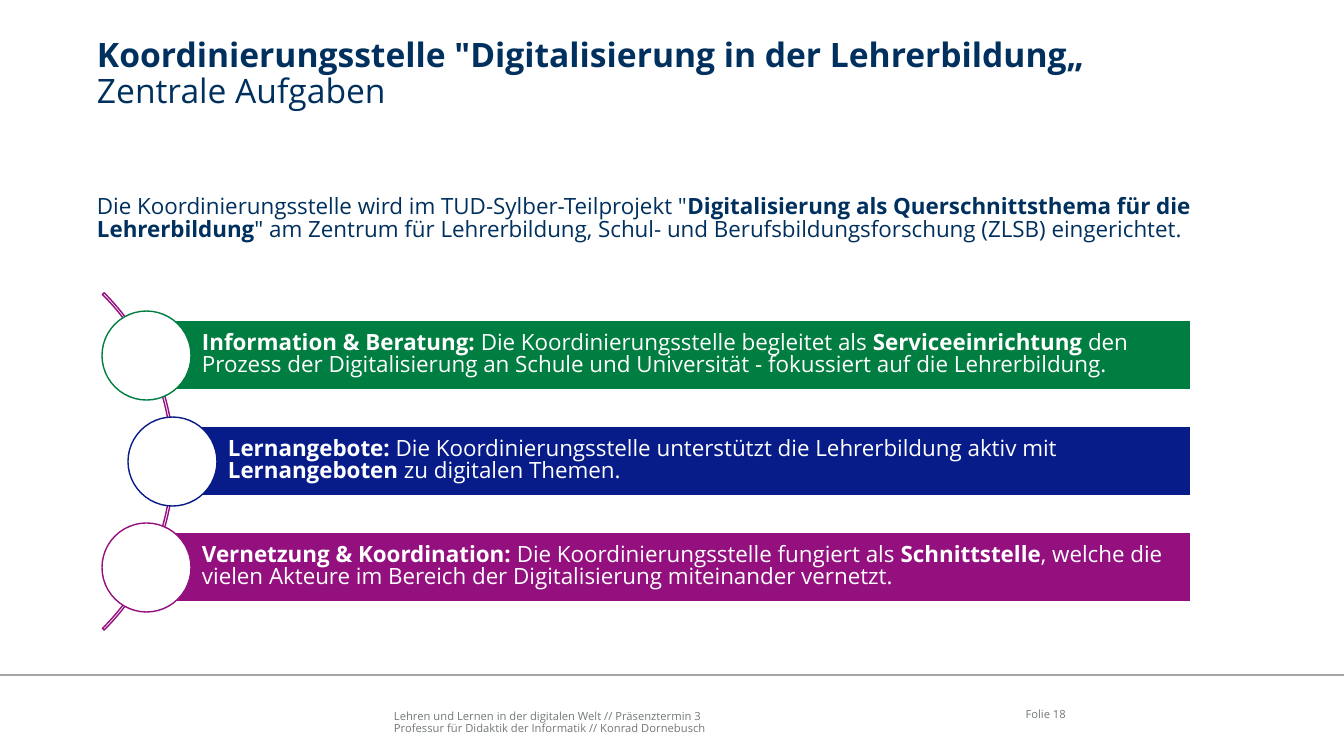
from dataclasses import dataclass

from lxml import etree
from pptx import Presentation
from pptx.dml.color import RGBColor
from pptx.enum import shapes, text
from pptx.oxml import ns
from pptx.util import Pt

EMU_PER_PX = 914400 / 100.8


@dataclass(frozen=True)
class Theme:
    font: str = "Open Sans"
    navy: str = "00305E"
    grey: str = "727879"
    rule: str = "A6A6A6"
    white: str = "FFFFFF"
    green: str = "007D40"
    blue: str = "071C89"
    purple: str = "93107E"
    title_size: int = 24
    body_size: int = 16
    footer_size: int = 8


THEME = Theme()

BAR_RIGHT, BAR_TOP, BAR_HEIGHT, BAR_PITCH = 1191, 320, 70, 106
CIRCLE_SIZE = 89

TASKS = [
    (146, THEME.green, [
        ("Information & Beratung: ", True),
        ("Die Koordinierungsstelle begleitet als ", False),
        ("Serviceeinrichtung", True),
        (" den Prozess der Digitalisierung an Schule und Universität"
         " - fokussiert auf die Lehrerbildung.", False)]),
    (172, THEME.blue, [
        ("Lernangebote: ", True),
        ("Die Koordinierungsstelle unterstützt die Lehrerbildung aktiv mit ", False),
        ("Lernangeboten", True),
        (" zu digitalen Themen.", False)]),
    (146, THEME.purple, [
        ("Vernetzung & Koordination: ", True),
        ("Die Koordinierungsstelle fungiert als ", False),
        ("Schnittstelle", True),
        (", welche die vielen Akteure im Bereich der Digitalisierung"
         " miteinander vernetzt.", False)]),
]


def px(*lengths):
    return [round(length * EMU_PER_PX) for length in lengths]


def rgb(color):
    return RGBColor.from_string(color)


def fill_frame(frame, paragraphs, size, color, spacing, insets=(0, 0, 0, 0)):
    """Write paragraphs, each a list of (words, bold) runs."""
    frame.word_wrap = True
    (frame.margin_left, frame.margin_top,
     frame.margin_right, frame.margin_bottom) = px(*insets)
    for index, runs in enumerate(paragraphs):
        paragraph = frame.add_paragraph() if index else frame.paragraphs[0]
        paragraph.alignment = text.PP_ALIGN.LEFT
        paragraph.line_spacing = spacing
        for words, bold in runs:
            run = paragraph.add_run()
            run.text = words
            run.font.name = THEME.font
            run.font.size = Pt(size)
            run.font.bold = bold
            run.font.color.rgb = rgb(color)


def add_text(slide, box, paragraphs, size, color, spacing):
    frame = slide.shapes.add_textbox(*px(*box)).text_frame
    fill_frame(frame, paragraphs, size, color, spacing)
    return frame


def add_outlined_shape(slide, kind, box, line, fill=None):
    shape = slide.shapes.add_shape(kind, *px(*box))
    shape.shadow.inherit = False
    if fill:
        shape.fill.solid()
        shape.fill.fore_color.rgb = rgb(fill)
    else:
        shape.fill.background()
    shape.line.color.rgb = rgb(line)
    shape.line.width = Pt(1)
    return shape


def add_footer_rule(slide):
    rule = slide.shapes.add_connector(
        shapes.MSO_CONNECTOR.STRAIGHT, *px(0, 675, 1344, 675))
    rule.line.color.rgb = rgb(THEME.rule)
    rule.line.width = Pt(1)
    etree.SubElement(rule._element.spPr, ns.qn("a:effectLst"))


def add_arc(slide):
    arc = add_outlined_shape(slide, shapes.MSO_SHAPE.BLOCK_ARC,
                             (-303, 223, 477, 477), THEME.purple)
    for index, value in enumerate((189, 27, 0.005)):
        arc.adjustments[index] = value


def add_task(slide, left, top, color, runs):
    """Add a coloured bar with a circle centred on its left edge."""
    bar = add_outlined_shape(slide, shapes.MSO_SHAPE.RECTANGLE,
                             (left, top, BAR_RIGHT - left, BAR_HEIGHT),
                             THEME.white, color)
    bar.text_frame.vertical_anchor = text.MSO_ANCHOR.MIDDLE
    fill_frame(bar.text_frame, [runs], THEME.body_size, THEME.white, 0.8,
               (56, 4, 4, 4))
    radius = CIRCLE_SIZE // 2
    add_outlined_shape(slide, shapes.MSO_SHAPE.OVAL,
                       (left - radius, top + BAR_HEIGHT // 2 - radius,
                        CIRCLE_SIZE, CIRCLE_SIZE), color, THEME.white)


def main():
    presentation = Presentation()
    presentation.slide_width, presentation.slide_height = px(1344, 756)
    slide = presentation.slides.add_slide(presentation.slide_layouts[6])

    add_text(slide, (394, 711, 572, 27), [
        [("Lehren und Lernen in der digitalen Welt // Präsenztermin 3", False)],
        [("Professur für Didaktik der Informatik // Konrad Dornebusch", False)],
    ], THEME.footer_size, THEME.grey, 0.9)
    add_footer_rule(slide)
    number = add_text(slide, (989, 709, 77, 14), [[("Folie 18", False)]],
                      THEME.footer_size, THEME.grey, 0.9)
    number.paragraphs[0].alignment = text.PP_ALIGN.RIGHT

    add_text(slide, (97, 38, 1166, 76), [
        [('Koordinierungsstelle "Digitalisierung in der Lehrerbildung„', True)],
        [("Zentrale Aufgaben", False)],
    ], THEME.title_size, THEME.navy, 0.9)
    add_text(slide, (97, 196, 1166, 56), [[
        ('Die Koordinierungsstelle wird im TUD-Sylber-Teilprojekt "', False),
        ("Digitalisierung als Querschnittsthema für die Lehrerbildung", True),
        ('" am Zentrum für Lehrerbildung, Schul- und Berufsbildungsforschung'
         " (ZLSB) eingerichtet.", False),
    ]], THEME.body_size, THEME.navy, 0.85)

    add_arc(slide)
    for row, (left, color, runs) in enumerate(TASKS):
        add_task(slide, left, BAR_TOP + row * BAR_PITCH, color, runs)

    presentation.save("out.pptx")


if __name__ == "__main__":
    main()
